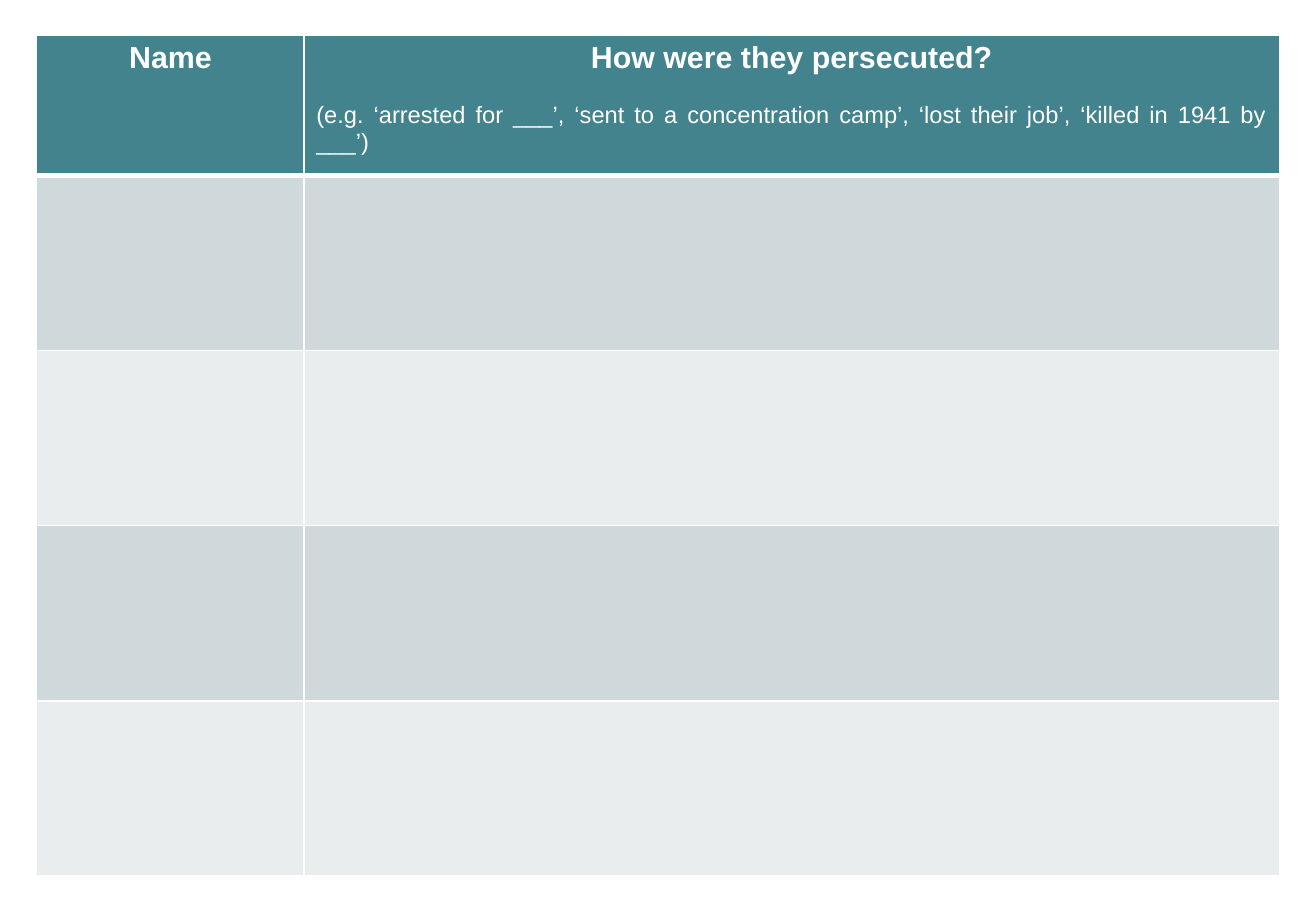
"""Build a worksheet slide with a table for recording how people were persecuted."""
from dataclasses import dataclass

from lxml import etree
from pptx import Presentation
from pptx.dml.color import RGBColor
from pptx.enum.text import PP_ALIGN
from pptx.oxml.ns import qn
from pptx.util import Pt

CENTER = PP_ALIGN.CENTER
JUSTIFY = PP_ALIGN.JUSTIFY


@dataclass(frozen=True)
class Theme:
    font: str = "Arial"
    white: str = "FFFFFF"
    header: str = "43838E"
    bands: tuple = ("CFD9DB", "E9EDEE")
    heading_size: int = 18
    example_size: int = 14


theme = Theme()


def style_cell(cell, fill, bottom_width):
    properties = cell._tc.get_or_add_tcPr()
    for side, width in (("L", 1), ("R", 1), ("T", 1), ("B", bottom_width)):
        line = etree.SubElement(properties, qn(f"a:ln{side}"), w=str(Pt(width)))
        solid = etree.SubElement(line, qn("a:solidFill"))
        etree.SubElement(solid, qn("a:srgbClr"), val=theme.white)
    cell.fill.solid()
    cell.fill.fore_color.rgb = RGBColor.from_string(fill)


def add_text(para, text, size, bold, alignment):
    para.alignment = alignment
    span = para.add_run()
    span.text = text
    span.font.name = theme.font
    span.font.size = Pt(size)
    span.font.bold = bold
    span.font.color.rgb = RGBColor.from_string(theme.white)


deck = Presentation()
deck.slide_width, deck.slide_height = Pt(780), Pt(540)
page = deck.slides.add_slide(deck.slide_layouts[6])

column_widths = (158.5, 578)
row_heights = (83.3,) + (103.8,) * 4
table = page.shapes.add_table(
    len(row_heights), len(column_widths), Pt(21.8), Pt(20.8),
    Pt(sum(column_widths)), Pt(sum(row_heights)),
).table
for column, width in zip(table.columns, column_widths):
    column.width = Pt(width)

for index, height in enumerate(row_heights):
    row = table.rows[index]
    row.height = Pt(height)
    is_header = index == 0
    fill = theme.header if is_header else theme.bands[(index - 1) % 2]
    for cell in row.cells:
        style_cell(cell, fill, 3 if is_header else 1)

for column, heading in enumerate(("Name", "How were they persecuted?")):
    para = table.cell(0, column).text_frame.paragraphs[0]
    add_text(para, heading, theme.heading_size, True, CENTER)

examples = table.cell(0, 1).text_frame.add_paragraph()
examples.space_before = Pt(16)
add_text(
    examples,
    "(e.g. ‘arrested for ___’, ‘sent to a concentration camp’, "
    "‘lost their job’, ‘killed in 1941 by ___’)",
    theme.example_size, False, JUSTIFY,
)

deck.save("out.pptx")
